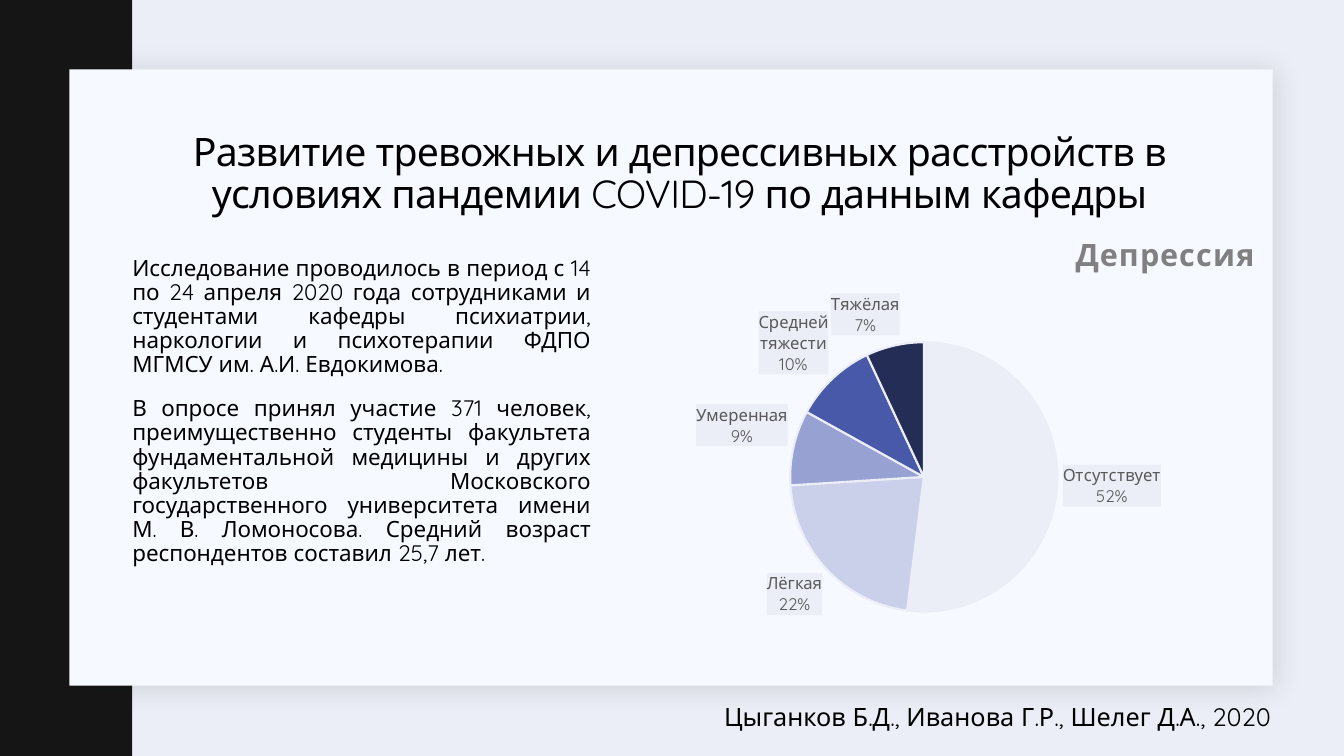
import copy

import lxml.etree
import pptx
import pptx.chart.data
import pptx.dml.color
import pptx.enum.chart
import pptx.enum.shapes
import pptx.enum.text
import pptx.oxml
import pptx.oxml.ns
import pptx.util

PX = 9525  # EMU per px, 96 px to the inch
FONT = "Quicksand"
COLORS = {
    "background": "ECEEF7", "band": "141514", "card": "F6F9FF",
    "shadow": "1F2125", "text": "000000", "heading": "808080",
    "label": "595959",
}
SEVERITY = [
    ("Отсутствует", 52, "ECEEF7"),
    ("Лёгкая", 22, "CAD0E9"),
    ("Умеренная", 9, "97A2D3"),
    ("Средней тяжести", 10, "4859AA"),
    ("Тяжёлая", 7, "242D55"),
]
TITLE = ("Развитие тревожных и депрессивных расстройств в условиях пандемии "
         "COVID-19 по данным кафедры")
STUDY = [
    "Исследование проводилось в период с 14 по 24 апреля 2020 года "
    "сотрудниками и студентами кафедры психиатрии, наркологии и "
    "психотерапии ФДПО МГМСУ им. А.И. Евдокимова.",
    "В опросе принял участие 371 человек, преимущественно студенты "
    "факультета фундаментальной медицины и других факультетов Московского "
    "государственного университета имени М. В. Ломоносова. Средний возраст "
    "респондентов составил 25,7 лет.",
]
AUTHORS = "Цыганков Б.Д., Иванова Г.Р., Шелег Д.А., 2020"
ALIGN = pptx.enum.text.PP_ALIGN


def rgb(name):
    return pptx.dml.color.RGBColor.from_string(COLORS.get(name, name))


def px(*lengths):
    return [length * PX for length in lengths]


def make_element(xml):
    """Parse an XML fragment that uses the a: and c: prefixes."""
    head, mark, rest = xml.partition(" ")
    return pptx.oxml.parse_xml(f"{head} {pptx.oxml.ns.nsdecls('a', 'c')} {rest}")


def style_font(font, size, color, bold=False):
    font.name = FONT
    font.size = pptx.util.Pt(size)
    font.bold = bold
    font.color.rgb = rgb(color)


def add_panel(page, bounds, color):
    panel = page.shapes.add_shape(
        pptx.enum.shapes.MSO_SHAPE.RECTANGLE, *px(*bounds))
    panel.shadow.inherit = False
    panel.fill.solid()
    panel.fill.fore_color.rgb = rgb(color)
    panel.line.fill.background()
    return panel


def add_soft_shadow(panel):
    effects = panel._element.spPr.find(pptx.oxml.ns.qn("a:effectLst"))
    effects.append(make_element(
        '<a:outerShdw blurRad="254000" dist="25400" dir="2700000" algn="tl" '
        f'rotWithShape="0"><a:srgbClr val="{COLORS["shadow"]}">'
        '<a:alpha val="15000"/></a:srgbClr></a:outerShdw>'))


def add_text(page, bounds, texts, size, align, line_spacing=1.0,
             before=0, after=0, tracking=0):
    box = page.shapes.add_textbox(*px(*bounds))
    frame = box.text_frame
    frame.word_wrap = True
    frame.text = "\n".join(texts)
    for para in frame.paragraphs:
        para.alignment = align
        para.line_spacing = line_spacing
        para.space_before = pptx.util.Pt(before)
        para.space_after = pptx.util.Pt(after)
        for span in para.runs:
            style_font(span.font, size, "text")
            if tracking:
                span.font._element.set("spc", str(tracking))
    return frame


def make_layout(target="", mode="edge", **fractions):
    inner = f'<c:layoutTarget val="{target}"/>' if target else ""
    modes = "".join(f'<c:{axis}Mode val="{mode}"/>' for axis in "xy")
    sizes = "".join(f'<c:{key} val="{value}"/>'
                    for key, value in fractions.items())
    return make_element(f"<c:layout ><c:manualLayout>{inner}{modes}{sizes}"
                        "</c:manualLayout></c:layout>")


def set_layout(parent, index, layout):
    for old in parent.findall(pptx.oxml.ns.qn("c:layout")):
        parent.remove(old)
    parent.insert(index, layout)


def format_labels(labels):
    labels.show_percentage = True
    labels.show_category_name = True
    labels.show_value = False
    labels.number_format = "0%"
    labels.number_format_is_linked = False
    labels.position = pptx.enum.chart.XL_LABEL_POSITION.OUTSIDE_END
    style_font(labels.font, 12, "label")
    # Tinted label boxes, category and percentage on separate lines
    element = labels._element
    element.find(pptx.oxml.ns.qn("c:txPr")).addprevious(make_element(
        '<c:spPr ><a:solidFill><a:srgbClr val="'
        f'{COLORS["background"]}"/></a:solidFill></c:spPr>'))
    element.find(pptx.oxml.ns.qn("c:showBubbleSize")).addnext(
        make_element("<c:separator >\n</c:separator>"))
    for leader in element.findall(pptx.oxml.ns.qn("c:showLeaderLines")):
        leader.set("val", "0")


def shift_label(labels, index, x, y):
    """Move one label by fractions of the chart, keeping the shared format."""
    element = labels._element
    label = make_element(f'<c:dLbl ><c:idx val="{index}"/></c:dLbl>')
    label.append(make_layout(mode="factor", x=x, y=y))
    for child in element:
        if child.tag != pptx.oxml.ns.qn("c:showLeaderLines"):
            label.append(copy.deepcopy(child))
    element.insert(0, label)


def add_severity_pie(page, bounds):
    data = pptx.chart.data.CategoryChartData()
    data.categories = [name for name, share, color in SEVERITY]
    data.add_series("Депрессия", [share for name, share, color in SEVERITY])
    chart = page.shapes.add_chart(
        pptx.enum.chart.XL_CHART_TYPE.PIE, *px(*bounds), data).chart
    style_font(chart.font, 10, "text")
    chart.has_legend = False

    # Heading at the upper right
    chart.has_title = True
    heading = chart.chart_title
    heading.text_frame.text = "Депрессия"
    span = heading.text_frame.paragraphs[0].runs[0]
    style_font(span.font, 22, "heading", bold=True)
    span.font._element.set("spc", "100")
    set_layout(heading._element, 1, make_layout(x=0.71, y=0.04))

    # Slices
    plot = chart.plots[0]
    plot.vary_by_categories = True
    series = plot.series[0]
    for index, (name, share, color) in enumerate(SEVERITY):
        slice_format = series.points[index].format
        slice_format.fill.solid()
        slice_format.fill.fore_color.rgb = rgb(color)
        slice_format.line.color.rgb = rgb("background")
        slice_format.line.width = pptx.util.Pt(1.5)
    set_layout(plot._element.getparent(), 0,
               make_layout("inner", x=0.27, y=0.29, w=0.42, h=0.63))

    # Labels, the last one moved clear of its neighbour
    format_labels(series.data_labels)
    shift_label(series.data_labels, len(SEVERITY) - 1, x=0.01, y=-0.01)


def main():
    deck = pptx.Presentation()
    deck.slide_width, deck.slide_height = px(1280, 720)
    page = deck.slides.add_slide(deck.slide_layouts[6])
    page.background.fill.solid()
    page.background.fill.fore_color.rgb = rgb("background")

    # Backdrop
    add_panel(page, (0, 0, 126, 720), "band")
    add_soft_shadow(add_panel(page, (66, 66, 1146, 587), "card"))

    # Study description and chart
    study = add_text(page, (126, 240, 437, 381), STUDY, 16, ALIGN.JUSTIFY,
                     line_spacing=0.9, before=12, after=2)
    study.margin_left = study.margin_right = 0
    add_severity_pie(page, (589, 199, 611, 422))

    # Title and authors
    title = add_text(page, (126, 99, 1042, 135), [TITLE], 28, ALIGN.CENTER,
                     line_spacing=0.9, tracking=-50)
    title.vertical_anchor = pptx.enum.text.MSO_ANCHOR.MIDDLE
    add_text(page, (536, 663, 684, 38), [AUTHORS], 18, ALIGN.RIGHT)

    deck.save("out.pptx")


if __name__ == "__main__":
    main()
